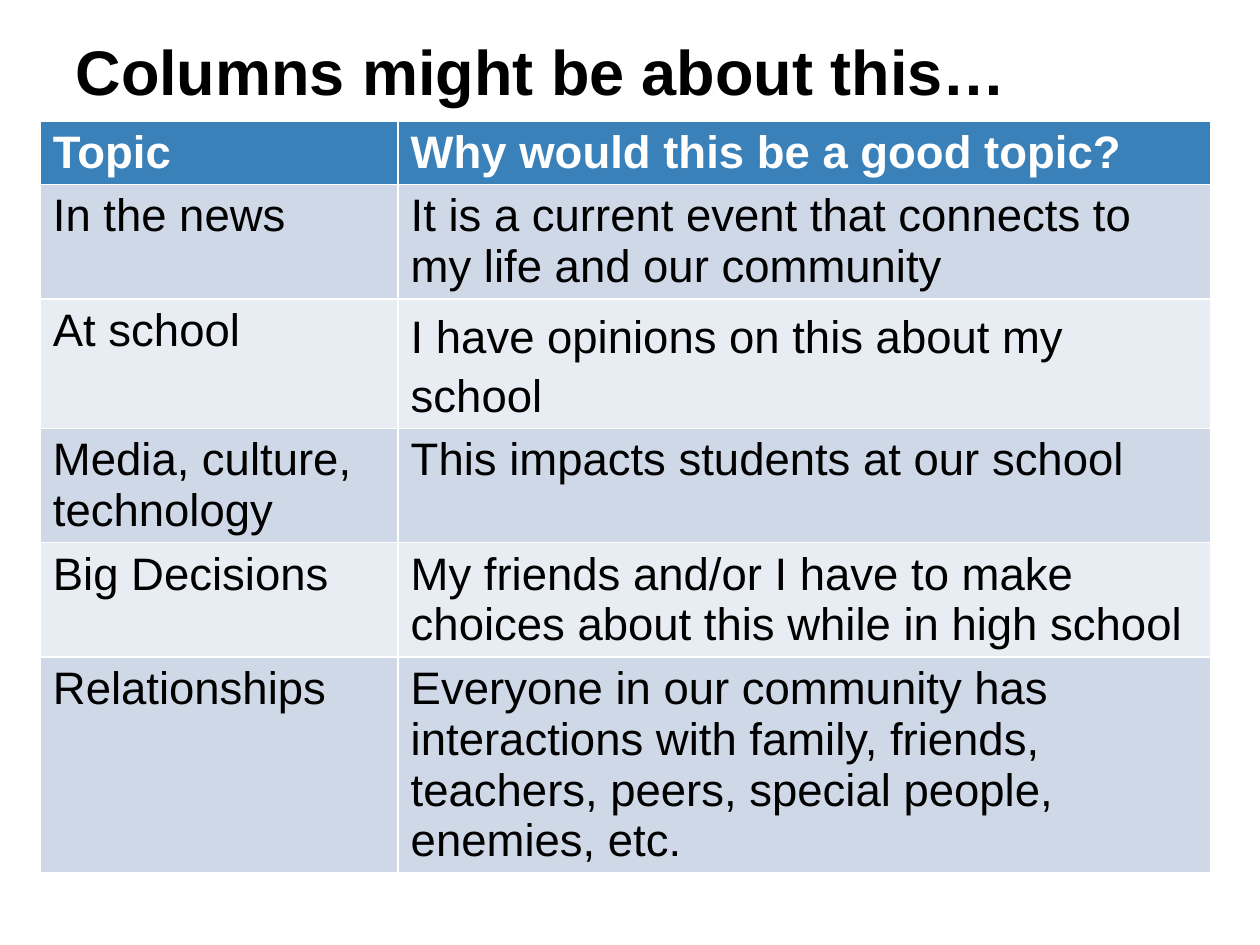
from pptx import Presentation
from pptx.dml.color import RGBColor
from pptx.enum.text import MSO_ANCHOR, MSO_AUTO_SIZE, PP_ALIGN
from pptx.util import Inches, Pt

LEFT = PP_ALIGN.LEFT
BOTTOM = MSO_ANCHOR.BOTTOM
NO_AUTOFIT = MSO_AUTO_SIZE.NONE
TITLE_ONLY = 5

FONT = "Arial"
BLACK, WHITE = "000000", "FFFFFF"
HEADER_FILL = "3A81BA"
BAND_FILLS = ["E8EDF3", "CED8E7"]  # even rows, odd rows

TOPICS = [
    ("Topic", "Why would this be a good topic?"),
    ("In the news", "It is a current event that connects to my life and our community"),
    ("At school", "I have opinions on this about my school"),
    ("Media, culture, technology", "This impacts students at our school"),
    ("Big Decisions", "My friends and/or I have to make choices about this while in high school"),
    ("Relationships", "Everyone in our community has interactions with family, friends, "
                      "teachers, peers, special people, enemies, etc."),
]
COLUMN_WIDTHS = [2.84, 6.45]
ROW_HEIGHT = 0.44


def color(hex_string):
    return RGBColor.from_string(hex_string)


def write(text_frame, text, size, hex_color, bold):
    text_frame.text = text
    paragraph = text_frame.paragraphs[0]
    paragraph.alignment = LEFT
    font = paragraph.runs[0].font
    font.name, font.size, font.bold = FONT, Pt(size), bold
    font.color.rgb = color(hex_color)


presentation = Presentation()
presentation.slide_width = Inches(10)
presentation.slide_height = Inches(7.5)
slide = presentation.slides.add_slide(presentation.slide_layouts[TITLE_ONLY])

# Title
title = slide.shapes.title
title.left, title.top = Inches(0.5), Inches(0.3)
title.width, title.height = Inches(9), Inches(0.66)
frame = title.text_frame
frame.margin_left = frame.margin_right = Inches(0.1)
frame.margin_top = frame.margin_bottom = Inches(0.1)
frame.vertical_anchor = BOTTOM
frame.auto_size = NO_AUTOFIT
frame.word_wrap = True
write(frame, "Columns might be about this…", 36, BLACK, True)

# Table: the default style draws the white borders, rows grow with their text
table = slide.shapes.add_table(
    len(TOPICS), len(COLUMN_WIDTHS), Inches(0.32), Inches(0.96),
    Inches(sum(COLUMN_WIDTHS)), Inches(ROW_HEIGHT * len(TOPICS))).table
for column, width in zip(table.columns, COLUMN_WIDTHS):
    column.width = Inches(width)

for row_index, topic in enumerate(TOPICS):
    is_header = row_index == 0
    table.rows[row_index].height = Inches(ROW_HEIGHT)
    for column_index, text in enumerate(topic):
        cell = table.cell(row_index, column_index)
        cell.fill.solid()
        cell.fill.fore_color.rgb = color(HEADER_FILL if is_header else BAND_FILLS[row_index % 2])
        write(cell.text_frame, text, 26, WHITE if is_header else BLACK, is_header)

# The reason for "At school" is set with looser lines
table.cell(2, 1).text_frame.paragraphs[0].line_spacing = 1.15

presentation.save("out.pptx")
